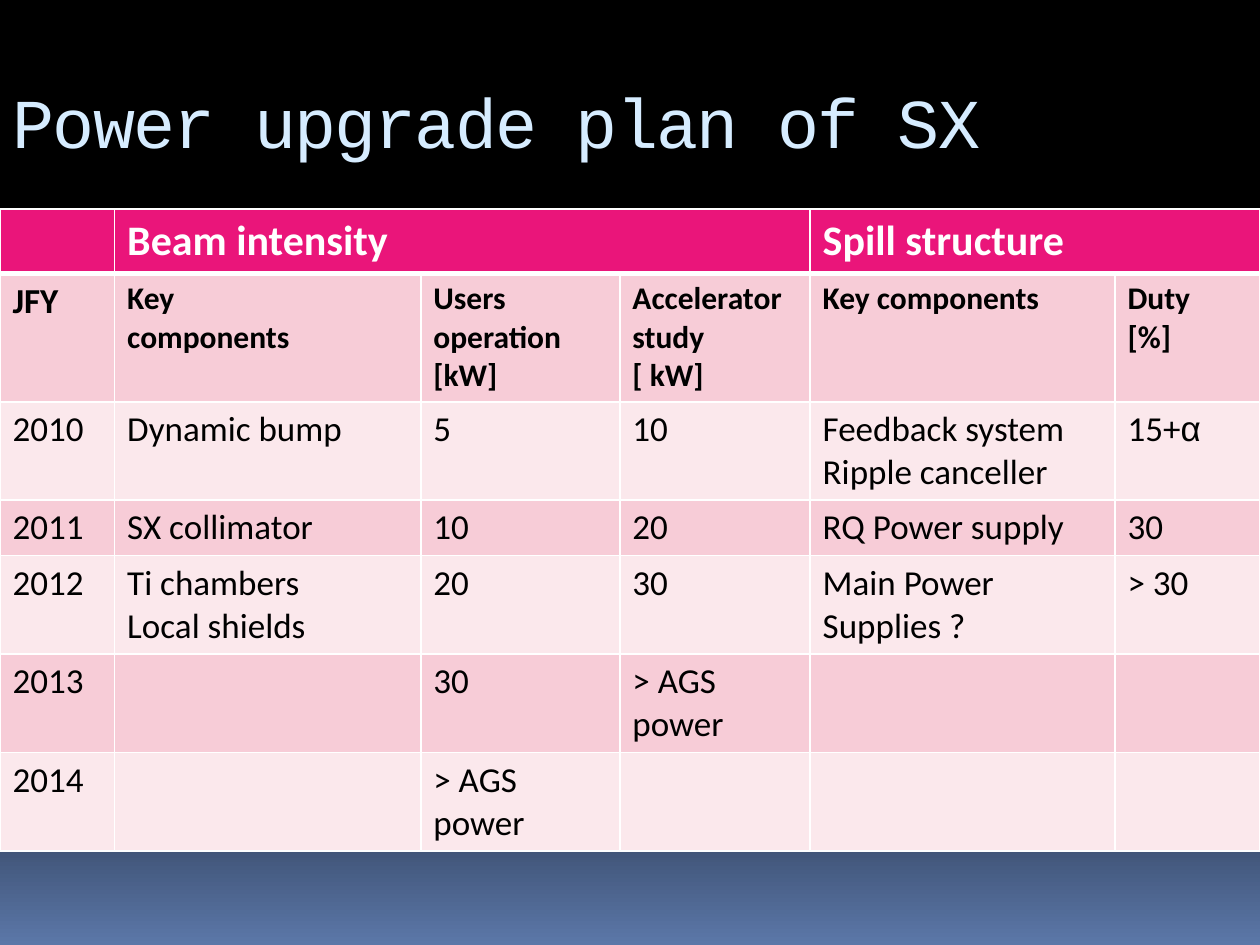
from typing import NamedTuple

from copy import deepcopy
from pptx import Presentation
from pptx.dml.color import RGBColor
from pptx.enum.text import MSO_ANCHOR, PP_ALIGN
from pptx.oxml import parse_xml
from pptx.oxml.ns import nsdecls, qn
from pptx.util import Inches, Pt

LEFT, MIDDLE = PP_ALIGN.LEFT, MSO_ANCHOR.MIDDLE
TITLE_ONLY = 5

COLORS = {
    "black": "000000", "blue": "5B77A8", "sky": "D6ECFF", "white": "FFFFFF",
    "pink": "EA157A", "rose": "F7CCD7", "pale": "FBE8EC",
}


class Style(NamedTuple):
    size: int
    bold: bool
    color: str


HEAD = Style(24, True, "white")
YEAR = Style(20, True, "black")
SUB = Style(18, True, "black")
BODY = Style(20, False, "black")

WIDTHS = [0.91, 2.43, 1.58, 1.51, 2.42, 1.15]
HEIGHTS = [0.51, 1.02, 0.78, 0.44, 0.78, 0.78, 0.78]
SPANS = [(1, 3), (4, 5)]
ROWS = [
    ["", "Beam intensity", "", "", "Spill structure", ""],
    ["JFY", "Key\ncomponents", "Users operation\n[kW]",
     "Accelerator\nstudy\n[ kW]", "Key components", "Duty\n[%]"],
    ["2010", "Dynamic bump", "5", "10",
     "Feedback system\nRipple canceller", "15+α"],
    ["2011", "SX collimator", "10", "20", "RQ Power supply", "30"],
    ["2012", "Ti chambers\nLocal shields", "20", "30",
     "Main Power\nSupplies ?", "> 30"],
    ["2013", "", "30", "> AGS power", "", ""],
    ["2014", "", "> AGS power", "", "", ""],
]


def rgb(name: str) -> RGBColor:
    return RGBColor.from_string(COLORS[name])


def set_font(font, style: Style, face: str) -> None:
    values = {"name": face, "size": Pt(style.size), "bold": style.bold}
    for key, value in values.items():
        setattr(font, key, value)
    font.color.rgb = rgb(style.color)


def paint_back(slide) -> None:
    fill = slide.background.fill
    fill.gradient()
    fill.gradient_angle = 270
    stops = slide.element.find(".//" + qn("a:gsLst"))
    stops.append(deepcopy(stops[-1]))
    shades = [(0, "black"), (0.65, "black"), (1, "blue")]
    for stop, (place, name) in zip(fill.gradient_stops, shades):
        stop.position = place
        stop.color.rgb = rgb(name)


def add_title(slide, text: str) -> None:
    title = slide.shapes.title
    box = {"left": 0, "top": 0.46, "width": 10, "height": 1}
    for key, value in box.items():
        setattr(title, key, Inches(value))
    frame = title.text_frame
    frame.vertical_anchor = MIDDLE
    para = frame.paragraphs[0]
    para.alignment = LEFT
    run = para.add_run()
    run.text = text
    set_font(run.font, Style(40, False, "sky"), "Courier New")
    run.font._element.set("spc", "-100")


def add_edges(cell, row: int) -> None:
    props = cell._tc.get_or_add_tcPr()
    heavy = {(0, "B"), (1, "T")}
    for side in "LRTB":
        width = Pt(3 if (row, side) in heavy else 1)
        props.append(parse_xml(
            f'<a:ln{side} {nsdecls("a")} w="{width}"><a:solidFill>'
            f'<a:srgbClr val="{COLORS["white"]}"/></a:solidFill></a:ln{side}>'))


def write_cell(cell, text: str, style: Style) -> None:
    frame = cell.text_frame
    for i, line in enumerate(text.split("\n")):
        para = frame.add_paragraph() if i else frame.paragraphs[0]
        set_font(para.font, style, "Calibri")
        plain, greek, _ = line.partition("α")
        for part, face in ((plain, "Calibri"), (greek, "Arial")):
            if part:
                run = para.add_run()
                run.text = part
                set_font(run.font, style, face)


def pick_style(row: int, col: int) -> Style:
    if row == 0:
        return HEAD
    if row == 1:
        return SUB if col else YEAR
    return BODY


def add_plan(slide) -> None:
    table = slide.shapes.add_table(
        len(ROWS), len(WIDTHS), Inches(0), Inches(1.66),
        Inches(sum(WIDTHS)), Inches(sum(HEIGHTS))).table
    for col, width in zip(table.columns, WIDTHS):
        col.width = Inches(width)
    for row, height in zip(table.rows, HEIGHTS):
        row.height = Inches(height)
    for first, last in SPANS:
        table.cell(0, first).merge(table.cell(0, last))
    for r, texts in enumerate(ROWS):
        shade = "pink" if r == 0 else "rose" if r % 2 else "pale"
        for c, text in enumerate(texts):
            cell = table.cell(r, c)
            add_edges(cell, r)
            cell.fill.solid()
            cell.fill.fore_color.rgb = rgb(shade)
            write_cell(cell, text, pick_style(r, c))


def main() -> None:
    deck = Presentation()
    deck.slide_width, deck.slide_height = Inches(10), Inches(7.5)
    slide = deck.slides.add_slide(deck.slide_layouts[TITLE_ONLY])
    paint_back(slide)
    add_title(slide, "Power upgrade plan of SX")
    add_plan(slide)
    deck.save("out.pptx")


if __name__ == "__main__":
    main()
